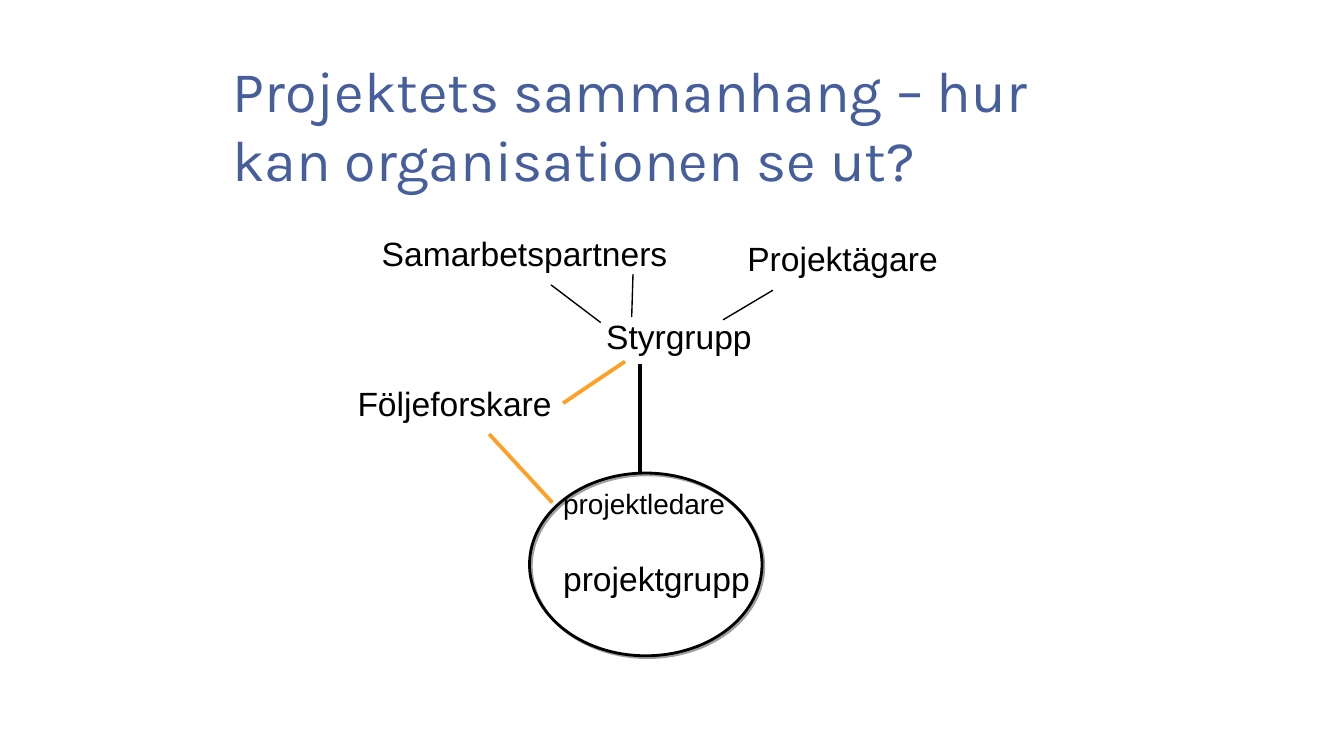
from lxml.etree import SubElement
from pptx import Presentation
from pptx.dml.color import RGBColor
from pptx.enum.shapes import MSO_CONNECTOR, MSO_SHAPE
from pptx.enum.text import MSO_ANCHOR, MSO_AUTO_SIZE, PP_ALIGN
from pptx.oxml import parse_xml
from pptx.oxml.ns import nsdecls, qn
from pptx.util import Inches, Pt

COLORS = {"title": "465E9C", "ink": "000000", "research": "FDA023", "shadow": "808080"}
TITLE = "Projektets sammanhang – hur kan organisationen se ut?"
LABELS = [
    ("Styrgrupp", 4.44, 2.31, 1.24, 18),
    ("Projektägare", 5.49, 1.73, 1.58, 18),
    ("projektledare", 4.12, 3.58, 1.37, 15),
    ("Samarbetspartners", 2.77, 1.69, 2.29, 18),
    ("projektgrupp", 4.12, 4.11, 1.55, 18),
    ("Följeforskare", 2.59, 2.81, 1.61, 18),
]
LINKS = [
    ((4.76, 2.71), (4.76, 3.52), "ink", 2),
    ((4.47, 2.4), (4.1, 2.12), "ink", 0.75),
    ((4.7, 2.36), (4.71, 2.04), "ink", 0.75),
    ((5.38, 2.38), (5.75, 2.16), "ink", 0.75),
    ((4.19, 3), (4.65, 2.69), "research", 2),
    ((3.64, 3.23), (4.11, 3.74), "research", 2),
]


def color(name):
    return RGBColor.from_string(COLORS[name])


def add_text(para, text, font, size, color_name):
    para.alignment = PP_ALIGN.LEFT
    span = para.add_run()
    span.text = text
    span.font.name = font
    span.font.size = Pt(size)
    span.font.color.rgb = color(color_name)


def add_title(page):
    title = page.shapes.title
    title.left, title.top = Inches(1.63), Inches(0.45)
    title.width, title.height = Inches(6.25), Inches(0.94)
    frame = title.text_frame
    frame.auto_size = MSO_AUTO_SIZE.NONE
    frame.word_wrap = True
    frame.vertical_anchor = MSO_ANCHOR.MIDDLE
    add_text(frame.paragraphs[0], TITLE, "Karla", 30.8, "title")


def add_group_circle(page):
    circle = page.shapes.add_shape(
        MSO_SHAPE.OVAL, Inches(3.94), Inches(3.52), Inches(1.73), Inches(1.36)
    )
    circle.fill.background()
    circle.line.color.rgb = color("ink")
    circle.line.width = Pt(1.5)
    circle.shadow.inherit = False
    effects = circle.element.spPr.find(qn("a:effectLst"))
    effects.append(parse_xml(
        f'<a:outerShdw {nsdecls("a")} blurRad="0" dist="{Pt(1.4)}" dir="2700000" '
        f'algn="ctr" rotWithShape="0"><a:srgbClr val="{COLORS["shadow"]}">'
        '<a:alpha val="75000"/></a:srgbClr></a:outerShdw>'
    ))


def add_link(page, start, end, color_name, width):
    points = [Inches(value) for value in start + end]
    link = page.shapes.add_connector(MSO_CONNECTOR.STRAIGHT, *points)
    link.line.color.rgb = color(color_name)
    link.line.width = Pt(width)
    SubElement(link.element.spPr, qn("a:effectLst"))


def add_label(page, text, left, top, width, size):
    height = 0.38 if size == 18 else 0.33
    box = page.shapes.add_textbox(
        Inches(left), Inches(top), Inches(width), Inches(height)
    )
    frame = box.text_frame
    frame.word_wrap = False
    frame.auto_size = MSO_AUTO_SIZE.SHAPE_TO_FIT_TEXT
    frame.margin_left = frame.margin_right = Inches(0.07)
    frame.margin_top = frame.margin_bottom = Inches(0.04)
    add_text(frame.paragraphs[0], text, "Arial", size, "ink")


def main():
    deck = Presentation()
    deck.slide_width = Inches(10)
    deck.slide_height = deck.slide_width * 9 // 16
    page = deck.slides.add_slide(deck.slide_layouts[5])
    add_title(page)
    add_group_circle(page)
    for link in LINKS:
        add_link(page, *link)
    for label in LABELS:
        add_label(page, *label)
    deck.save("out.pptx")


if __name__ == "__main__":
    main()
